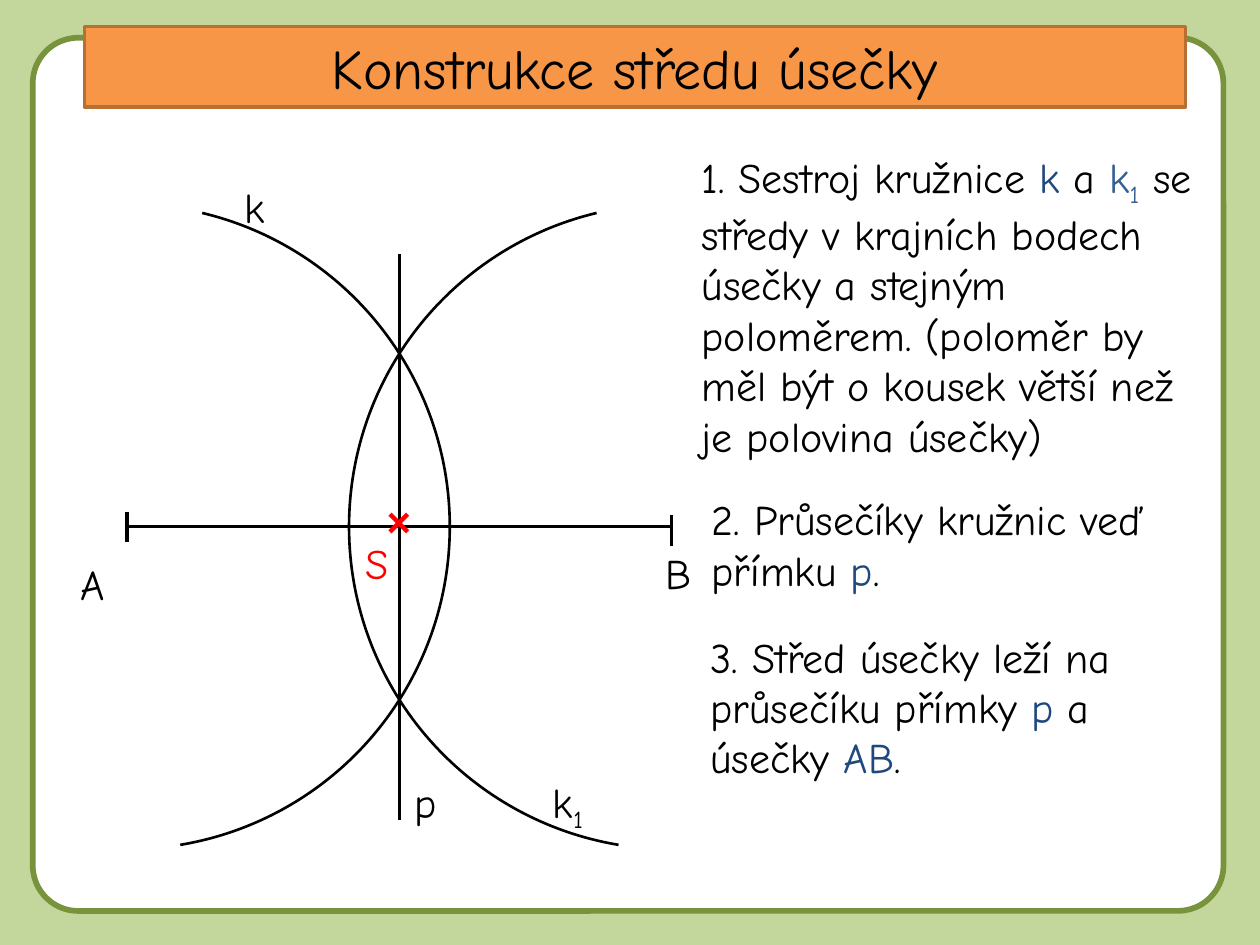
from lxml.etree import SubElement
from pptx import Presentation
from pptx.dml.color import RGBColor
from pptx.enum.shapes import MSO_CONNECTOR, MSO_SHAPE
from pptx.enum.text import MSO_ANCHOR, MSO_AUTO_SIZE, PP_ALIGN
from pptx.oxml.ns import qn
from pptx.util import Inches, Pt

HUES = {
    "back": "C3D69B", "panel": "FFFFFF", "rim": "77933C",
    "bar": "F79646", "edge": "B76F34", "ink": "000000",
    "blue": "1F497D", "sky": "376092", "red": "FF0000",
}
FONT = "Comic Neue"


def hue(name):
    """Return the named colour."""
    return RGBColor.from_string(HUES[name])


def style(run, color="ink", sub=False, size=24, font=FONT, bold=False):
    """Format one run of text."""
    run.font.size = Pt(size)
    run.font.name = font
    run.font.bold = bold
    run.font.color.rgb = hue(color)
    if sub:
        run.font._element.set("baseline", "-25000")


def write(shapes, box, parts, **look):
    """Add a text box whose parts are (text, colour, subscript) runs."""
    frame = shapes.add_textbox(*map(Inches, box)).text_frame
    frame.word_wrap = True
    frame.auto_size = MSO_AUTO_SIZE.SHAPE_TO_FIT_TEXT
    for text, *rest in parts:
        run = frame.paragraphs[0].add_run()
        run.text = text
        style(run, *rest, **look)


def form(shapes, kind, box, fill, line, width):
    """Add a preset shape, unfilled if fill is None."""
    shape = shapes.add_shape(kind, *map(Inches, box))
    shape.shadow.inherit = False
    if fill:
        shape.fill.solid()
        shape.fill.fore_color.rgb = hue(fill)
    else:
        shape.fill.background()
    shape.line.color.rgb = hue(line)
    shape.line.width = Pt(width)
    return shape


def rule(shapes, start, end, width):
    """Add a straight black line."""
    line = shapes.add_connector(MSO_CONNECTOR.STRAIGHT, *map(Inches, start + end))
    line.line.color.rgb = hue("ink")
    line.line.width = Pt(width)
    SubElement(line._element.spPr, qn("a:effectLst"))


def panel(shapes, box):
    """Draw the rounded white panel."""
    shape = form(shapes, MSO_SHAPE.ROUNDED_RECTANGLE, box, "panel", "rim", 3.25)
    shape.adjustments[0] = 0.052


def title(shapes, box):
    """Draw the title bar."""
    shape = form(shapes, MSO_SHAPE.RECTANGLE, box, "bar", "edge", 2)
    frame = shape.text_frame
    frame.text = "Konstrukce středu úsečky"
    frame.vertical_anchor = MSO_ANCHOR.MIDDLE
    para = frame.paragraphs[0]
    para.alignment = PP_ALIGN.CENTER
    style(para.runs[0], size=32)


def figure(shapes, box):
    """Draw segment AB, both arcs, line p and their labels."""
    left, top, wide, high = box
    right, mid, axis = left + wide, left + wide / 2, top + high / 2
    group = shapes.add_group_shape().shapes
    rule(group, (left, axis), (right, axis), 2)
    for x, y in ((left, axis), (right, axis + 0.03)):
        rule(group, (x, y - 0.12), (x, y + 0.12), 2)

    reach = 2.56
    for x, flip in ((left, False), (right, True)):
        area = (x - reach, axis - reach, 2 * reach, 2 * reach)
        arc = form(shapes, MSO_SHAPE.ARC, area, None, "ink", 1.5)
        arc.adjustments[0] = 170.07
        arc.adjustments[1] = 48.32
        if flip:
            arc._element.spPr.get_or_add_xfrm().set("flipH", "1")
    rule(shapes, (mid, top), (mid, top + high + 0.17), 1.5)

    write(shapes, (mid - 0.2, axis - 0.3, 0.47, 0.5), [("×", "red")],
          font="Arial", bold=True)
    labels = (
        (-0.47, 2.36, [("A",)]),
        (4.17, 2.28, [("B",)]),
        (0.83, -0.63, [("k",)]),
        (1.79, 2.2, [("S", "red")]),
        (3.28, 4.09, [("k",), ("1", "ink", True)]),
        (2.18, 4.09, [("p",)]),
    )
    for x, y, parts in labels:
        write(shapes, (left + x, top + y, 0.5, 0.5), parts)


def steps(shapes, box):
    """Write the three steps of the construction."""
    left, top, wide, _ = box
    items = (
        (0, 0, 2.52, [
            ("1. Sestroj kružnice ",), ("k", "blue"), (" a ",), ("k", "sky"),
            ("1", "sky", True),
            (" se středy v krajních bodech úsečky a stejným poloměrem. "
             "(poloměr by měl být o kousek větší než je polovina úsečky)",)]),
        (0.08, 2.72, 0.91, [
            ("2. Průsečíky kružnic veď přímku ",), ("p", "blue"), (".",)]),
        (0.07, 3.81, 1.31, [
            ("3. Střed úsečky leží na průsečíku přímky ",), ("p", "blue"),
            (" a úsečky ",), ("AB", "blue"), (".",)]),
    )
    for x, y, high, parts in items:
        write(shapes, (left + x, top + y, wide, high), parts)


def main():
    """Build the slide and save it."""
    deck = Presentation()
    deck.slide_width, deck.slide_height = Inches(10), Inches(7.5)
    slide = deck.slides.add_slide(deck.slide_layouts[6])
    slide.background.fill.solid()
    slide.background.fill.fore_color.rgb = hue("back")
    panel(slide.shapes, (0.26, 0.3, 9.45, 6.93))
    title(slide.shapes, (0.67, 0.21, 8.74, 0.64))
    figure(slide.shapes, (1.01, 2.02, 4.32, 4.32))
    steps(slide.shapes, (5.47, 1.15, 4.25, 5.12))
    deck.save("out.pptx")


if __name__ == "__main__":
    main()
